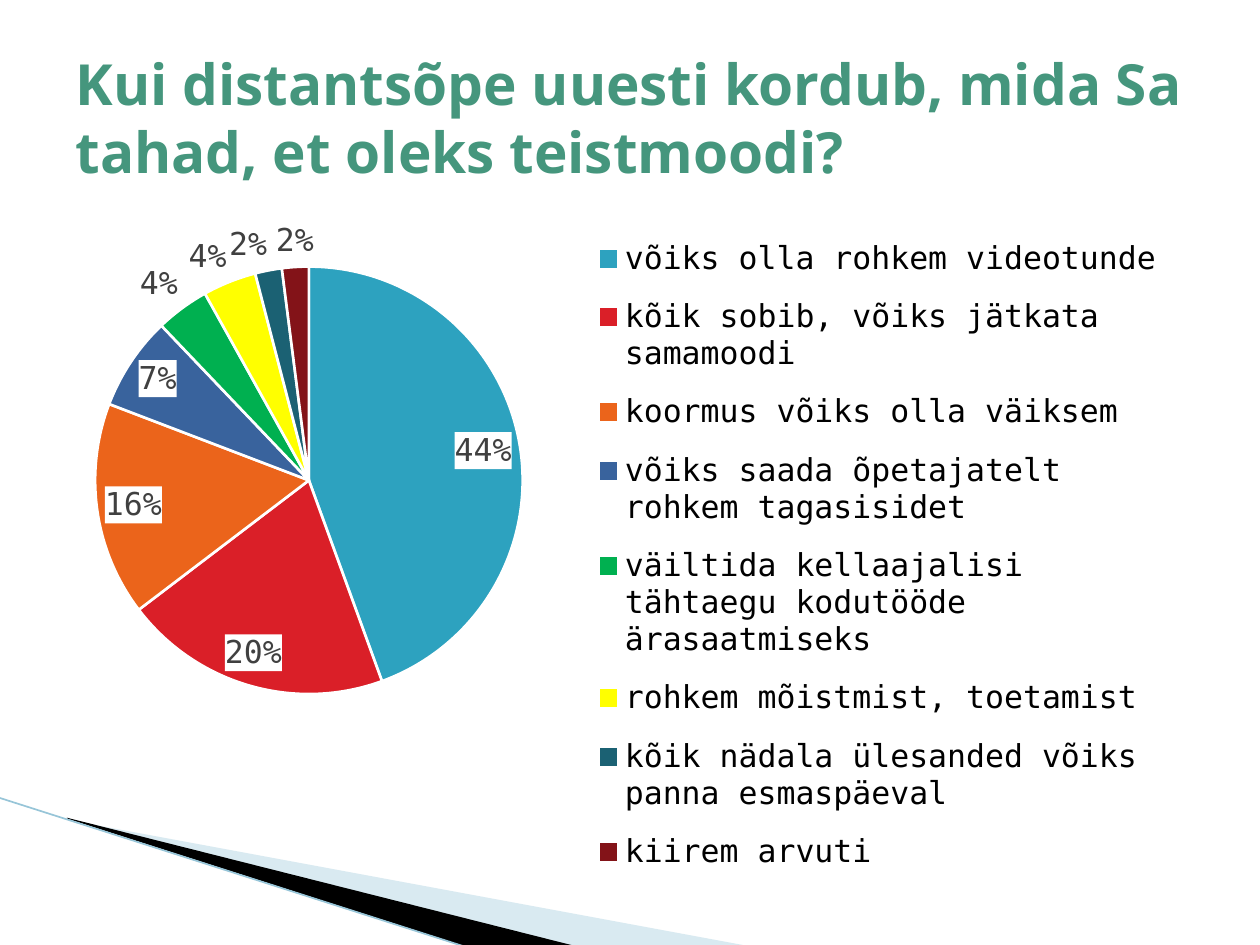
"""Build a survey slide with a pie chart of wishes for distance learning."""
from dataclasses import dataclass

from pptx import Presentation
from pptx import util as u
from pptx.chart import data as chart_data
from pptx.dml import color
from pptx.enum import chart as charts
from pptx.enum import shapes, text
from pptx.oxml import parse_xml
from pptx.oxml import ns

TITLE = "Kui distantsõpe uuesti kordub, mida Sa tahad, et oleks teistmoodi?"
ANSWERS = [
    ("võiks olla rohkem videotunde", 0.44, "2DA2BF"),
    ("kõik sobib, võiks jätkata samamoodi", 0.2, "DA1F28"),
    ("koormus võiks olla väiksem", 0.16, "EB641B"),
    ("võiks saada õpetajatelt rohkem tagasisidet", 0.07, "39639D"),
    ("väiltida kellaajalisi tähtaegu kodutööde ärasaatmiseks", 0.04, "00B050"),
    ("rohkem mõistmist, toetamist", 0.04, "FFFF00"),
    ("kõik nädala ülesanded võiks panna esmaspäeval", 0.02, "1B6173"),
    ("kiirem arvuti", 0.02, "831318"),
]


@dataclass(frozen=True)
class Theme:
    """Colours, fonts and type sizes of the slide."""

    heading: str = "45967D"
    ink: str = "000000"
    label: str = "404040"
    paper: str = "FFFFFF"
    pale_wedge: str = "A0CBDC"
    edge: str = "97C5D8"
    heading_font: str = "Open Sans"
    chart_font: str = "DejaVu Sans Mono"
    heading_size: float = 32.4
    label_size: float = 18
    chart_size: float = 10


def rgb(value):
    """Turn a hex string into a colour."""
    return color.RGBColor.from_string(value)


class SlideBuilder:
    """Hold the theme and the current slide, and add elements to it."""

    def __init__(self, slide, theme):
        """Keep the slide and its theme."""
        self.slide = slide
        self.theme = theme

    def style(self, font, name, size, value, bold=False):
        """Format a font."""
        font.name, font.size, font.bold = name, u.Pt(size), bold
        font.color.rgb = rgb(value)

    def title(self, words, left, top, width, height):
        """Place and format the title placeholder."""
        shape = self.slide.shapes.title
        shape.left, shape.top = u.Pt(left), u.Pt(top)
        shape.width, shape.height = u.Pt(width), u.Pt(height)
        frame = shape.text_frame
        frame.text = words
        frame.word_wrap = True
        frame.auto_size = text.MSO_AUTO_SIZE.NONE
        frame.vertical_anchor = text.MSO_ANCHOR.MIDDLE
        paragraph = frame.paragraphs[0]
        paragraph.alignment = text.PP_ALIGN.LEFT
        theme = self.theme
        self.style(paragraph.runs[0].font, theme.heading_font,
                   theme.heading_size, theme.heading, True)

    def wedge(self, points, fill, opacity=100):
        """Add a filled outline without a border."""
        start, *rest = [(u.Pt(x), u.Pt(y)) for x, y in points]
        builder = self.slide.shapes.build_freeform(*start)
        builder.add_line_segments(rest, close=True)
        shape = builder.convert_to_shape()
        shape.shadow.inherit = False
        shape.fill.solid()
        shape.fill.fore_color.rgb = rgb(fill)
        shape.line.fill.background()
        if opacity < 100:
            solid = shape.fill._xPr.find(ns.qn("a:solidFill"))
            solid[0].append(parse_xml(
                f'<a:alpha {ns.nsdecls("a")} val="{opacity * 1000}"/>'))

    def line(self, start, end, value, width):
        """Add a straight line."""
        ends = [u.Pt(length) for length in (*start, *end)]
        connector = self.slide.shapes.add_connector(shapes.MSO_CONNECTOR.STRAIGHT, *ends)
        connector.line.color.rgb = rgb(value)
        connector.line.width = u.Pt(width)
        connector._element.spPr.append(parse_xml(f'<a:effectLst {ns.nsdecls("a")}/>'))

    def layout(self, element, index, x, y, w, h, target=""):
        """Give a chart part a fixed place, as fractions of the chart."""
        for existing in element.findall(ns.qn("c:layout")):
            element.remove(existing)
        sizes = "".join(f'<c:{key} val="{value}"/>'
                        for key, value in zip("xywh", (x, y, w, h)))
        element.insert(index, parse_xml(
            f'<c:layout {ns.nsdecls("c")}><c:manualLayout>{target}'
            f'<c:xMode val="edge"/><c:yMode val="edge"/>{sizes}'
            '</c:manualLayout></c:layout>'))

    def pie(self, answers, left, top, width, height):
        """Add the pie chart with its labels and legend."""
        theme = self.theme
        data = chart_data.CategoryChartData(number_format="0%")
        data.categories = [name for name, _, _ in answers]
        data.add_series("Series 1", [share for _, share, _ in answers])
        frame = self.slide.shapes.add_chart(
            charts.XL_CHART_TYPE.PIE, u.Pt(left), u.Pt(top), u.Pt(width), u.Pt(height), data)
        chart = frame.chart
        chart.has_title = False
        self.style(chart.font, theme.chart_font, theme.chart_size, theme.ink)
        plot = chart.plots[0]
        plot.vary_by_categories = True
        series = plot.series[0]
        for index, (_, _, fill) in enumerate(answers):
            slice_format = series.points[index].format
            slice_format.fill.solid()
            slice_format.fill.fore_color.rgb = rgb(fill)
            slice_format.line.color.rgb = rgb(theme.paper)
            slice_format.line.width = u.Pt(1.5)
        self.labels(series.data_labels)
        self.layout(chart._chartSpace.chart.plotArea, 0, 0.045, 0.079, 0.377, 0.685,
                    '<c:layoutTarget val="inner"/>')
        chart.has_legend = True
        legend = chart.legend
        legend.position = charts.XL_LEGEND_POSITION.BOTTOM
        legend.include_in_layout = False
        self.style(legend.font, theme.chart_font, theme.label_size, theme.ink)
        self.layout(legend._element, 1, 0.48, 0.06, 0.51, 0.93)

    def labels(self, labels):
        """Show shares on a plain background."""
        theme = self.theme
        labels.show_value = True
        labels.show_percentage = False
        labels.number_format = "0%"
        labels.number_format_is_linked = False
        labels.position = charts.XL_LABEL_POSITION.BEST_FIT
        self.style(labels.font, theme.chart_font, theme.label_size, theme.label)
        labels._element.find(ns.qn("c:txPr")).addprevious(parse_xml(
            f'<c:spPr {ns.nsdecls("c", "a")}><a:solidFill>'
            f'<a:srgbClr val="{theme.paper}"/></a:solidFill></c:spPr>'))


def main():
    """Build and save the presentation."""
    presentation = Presentation()
    presentation.slide_width, presentation.slide_height = u.Pt(720), u.Pt(540)
    theme = Theme()
    slide = presentation.slides.add_slide(presentation.slide_layouts[5])
    builder = SlideBuilder(slide, theme)
    builder.wedge([(39.6, 468.7), (428.4, 540.7), (328.3, 540.7), (39.6, 468)],
                  theme.pale_wedge, 40)
    builder.wedge([(38.2, 467.3), (329, 540.7), (267.8, 541.4), (38.9, 468)], theme.ink)
    builder.line((-0.7, 455.8), (267.1, 541.4), theme.edge, 0.95)
    builder.pie(ANSWERS, 25.2, 100, 648, 414)
    builder.title(TITLE, 36, 21.6, 648, 90)
    presentation.save("out.pptx")


if __name__ == "__main__":
    main()
